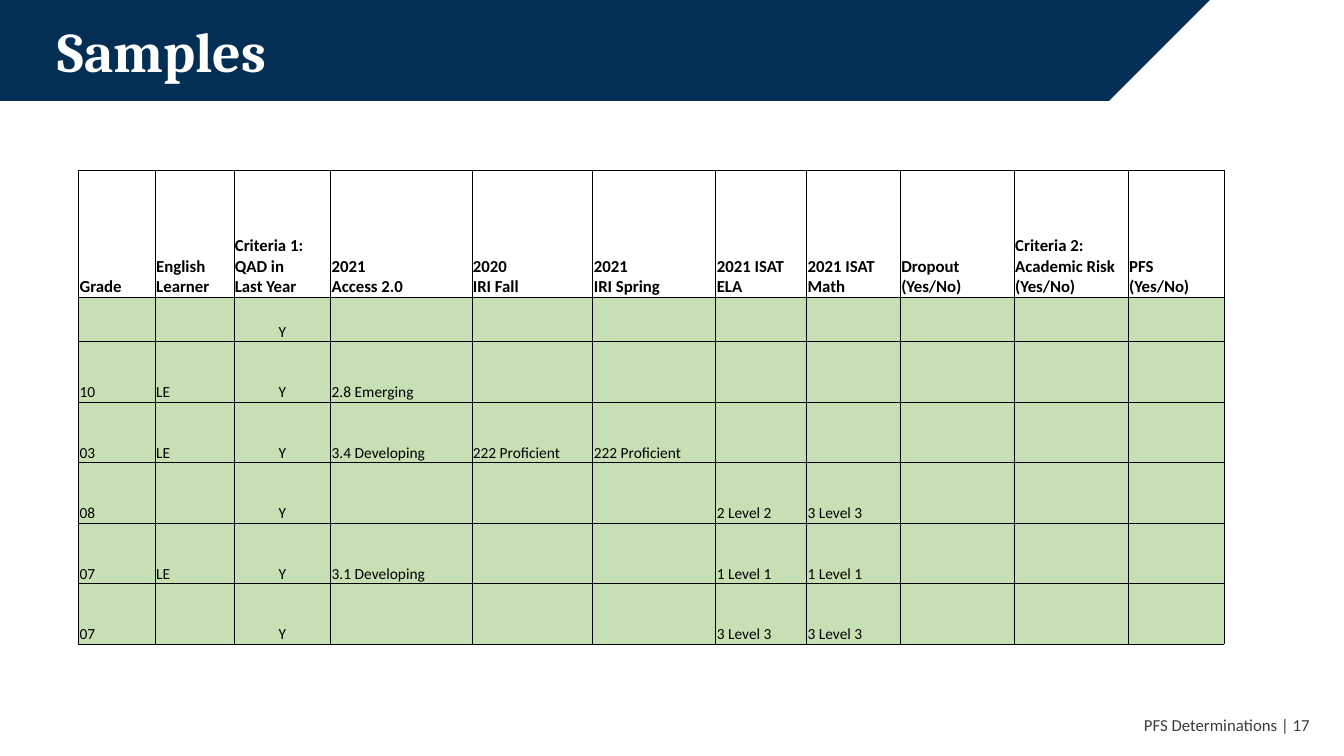
from lxml.etree import SubElement
from pptx import Presentation
from pptx.dml.color import RGBColor as Rgb
from pptx.enum.text import MSO_ANCHOR as Anchor, PP_ALIGN as Align
from pptx.oxml.ns import qn
from pptx.util import Inches, Pt

COLORS = {
    "navy": "032F55",
    "green": "C6E0B4",
    "black": "000000",
    "white": "FFFFFF",
    "gray": "3C3C3C",
}
WIDTHS = [0.76, 0.78, 0.96, 1.4, 1.2, 1.22, 0.9, 0.93, 1.13, 1.13, 0.95]
HEIGHTS = [1.26, 0.44] + [0.6] * 5
HEADS = [
    "Grade", "English\nLearner", "Criteria 1:\nQAD in\nLast Year",
    "2021\nAccess 2.0", "2020\nIRI Fall", "2021\nIRI Spring",
    "2021 ISAT ELA", "2021 ISAT Math", "Dropout\n(Yes/No)",
    "Criteria 2:\nAcademic Risk\n(Yes/No)", "PFS\n(Yes/No)",
]
# Cells to the right of the last value stay empty
PUPILS = [
    ["", "", "Y"],
    ["10", "LE", "Y", "2.8 Emerging"],
    ["03", "LE", "Y", "3.4 Developing", "222 Proficient", "222 Proficient"],
    ["08", "", "Y", "", "", "", "2 Level 2", "3 Level 3"],
    ["07", "LE", "Y", "3.1 Developing", "", "", "1 Level 1", "1 Level 1"],
    ["07", "", "Y", "", "", "", "3 Level 3", "3 Level 3"],
]
QAD_COL = 2


def color(name):
    return Rgb.from_string(COLORS[name])


def write(frame, text, size, tone, font="Calibri", bold=False, align=Align.LEFT):
    para = frame.paragraphs[0]
    para.text = text
    para.alignment = align
    for run in para.runs:
        run.font.name = font
        run.font.size = Pt(size)
        run.font.bold = bold
        run.font.color.rgb = color(tone)
    return para


def add_banner(slide):
    """Draw the slanted title band behind everything else."""
    path = slide.shapes.build_freeform(0, 0, scale=Inches(1))
    path.add_line_segments([(11.66, 0), (11.1, 1.11), (0, 1.11)])
    band = path.convert_to_shape()
    band.shadow.inherit = False
    band.fill.solid()
    band.fill.fore_color.rgb = color("navy")
    band.line.fill.background()
    slide.shapes._spTree.insert(2, band._element)


def set_title(slide, text):
    title = slide.shapes.title
    title.left, title.top = Inches(0.47), Inches(0)
    title.width, title.height = Inches(11.5), Inches(1.08)
    frame = title.text_frame
    frame.vertical_anchor = Anchor.MIDDLE
    para = write(frame, text, 40, "white", "Cambria", True)
    para.line_spacing = 0.9


def add_borders(cell):
    props = cell._tc.get_or_add_tcPr()
    for side in ("L", "R", "T", "B"):
        line = SubElement(props, qn("a:ln" + side), w=str(Pt(0.5)))
        fill = SubElement(line, qn("a:solidFill"))
        SubElement(fill, qn("a:srgbClr"), val=COLORS["black"])


def fill_cell(cell, text, head, align):
    cell.margin_left = cell.margin_right = cell.margin_top = Inches(0.01)
    cell.margin_bottom = 0
    cell.vertical_anchor = Anchor.BOTTOM
    add_borders(cell)
    if head:
        cell.fill.background()
    else:
        cell.fill.solid()
        cell.fill.fore_color.rgb = color("green")
    if text:
        write(cell.text_frame, text, 12 if head else 11, "black",
              bold=head, align=align)


def add_grid(slide):
    rows = [HEADS] + PUPILS
    table = slide.shapes.add_table(
        len(rows), len(HEADS), Inches(0.78), Inches(1.69),
        Inches(sum(WIDTHS)), Inches(sum(HEIGHTS))).table
    table.first_row = table.horz_banding = False
    for col, width in zip(table.columns, WIDTHS):
        col.width = Inches(width)
    for row, height in zip(table.rows, HEIGHTS):
        row.height = Inches(height)
    for r, texts in enumerate(rows):
        for c in range(len(HEADS)):
            text = texts[c] if c < len(texts) else ""
            center = r > 0 and c == QAD_COL
            fill_cell(table.cell(r, c), text, r == 0,
                      Align.CENTER if center else Align.LEFT)


def add_footer(slide, text):
    box = slide.shapes.add_textbox(
        Inches(10.09), Inches(6.99), Inches(3), Inches(0.4))
    frame = box.text_frame
    frame.word_wrap = True
    frame.vertical_anchor = Anchor.MIDDLE
    write(frame, text, 12, "gray", align=Align.RIGHT)


def main():
    deck = Presentation()
    deck.slide_width, deck.slide_height = Inches(13.33), Inches(7.5)
    slide = deck.slides.add_slide(deck.slide_layouts[5])
    add_banner(slide)
    set_title(slide, "Samples")
    add_grid(slide)
    add_footer(slide, "PFS Determinations | 17")
    deck.save("out.pptx")


if __name__ == "__main__":
    main()
